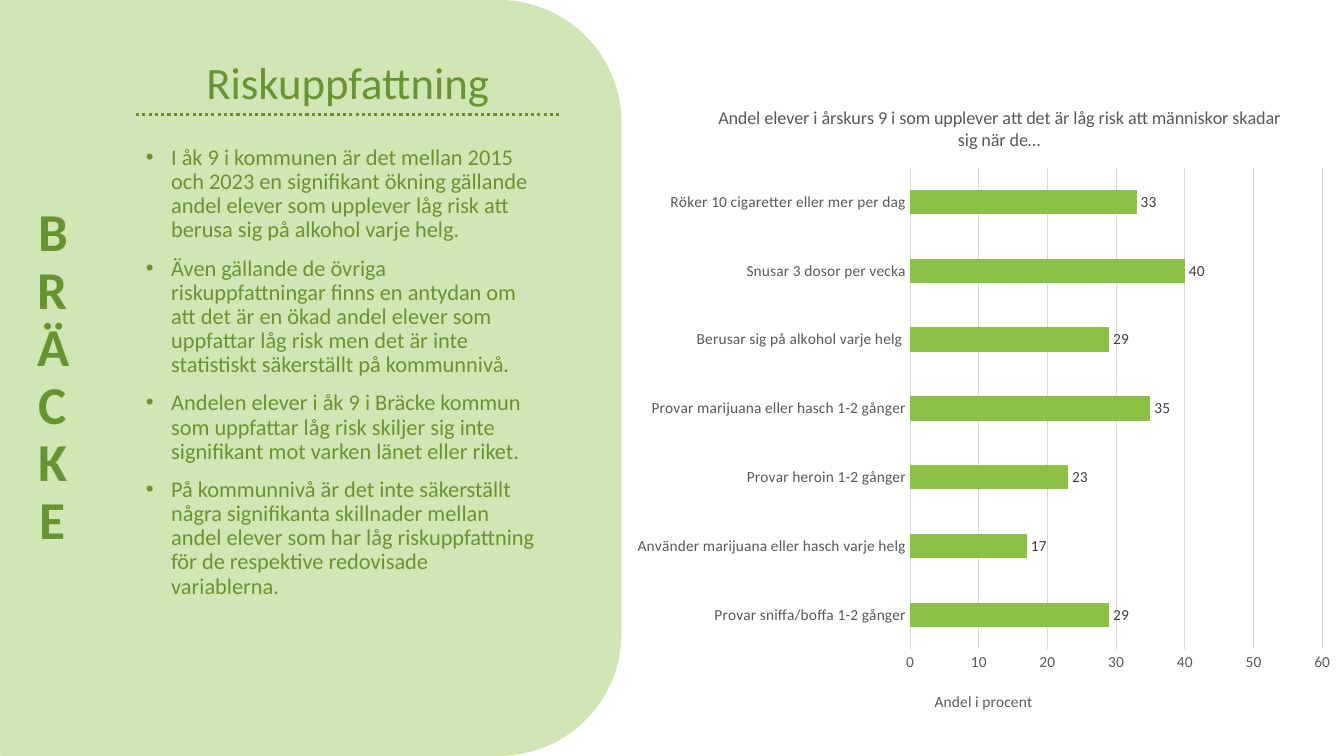
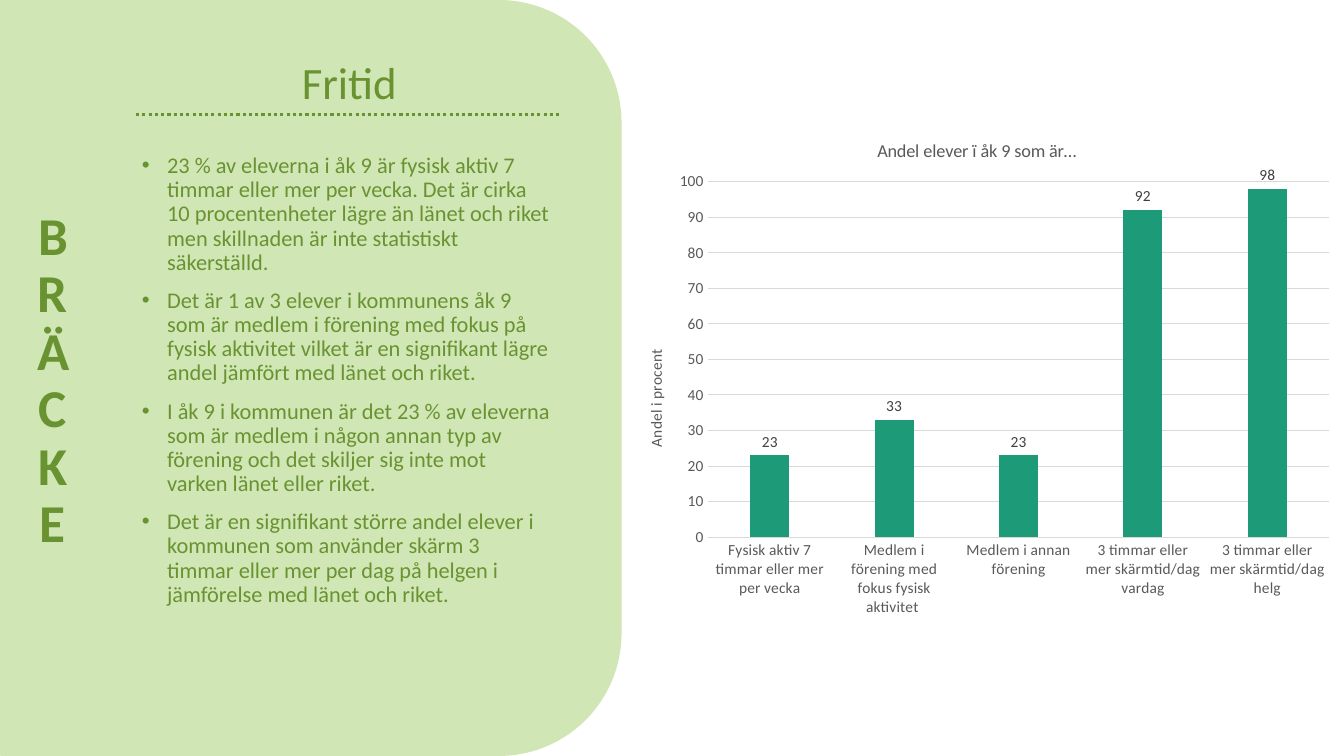
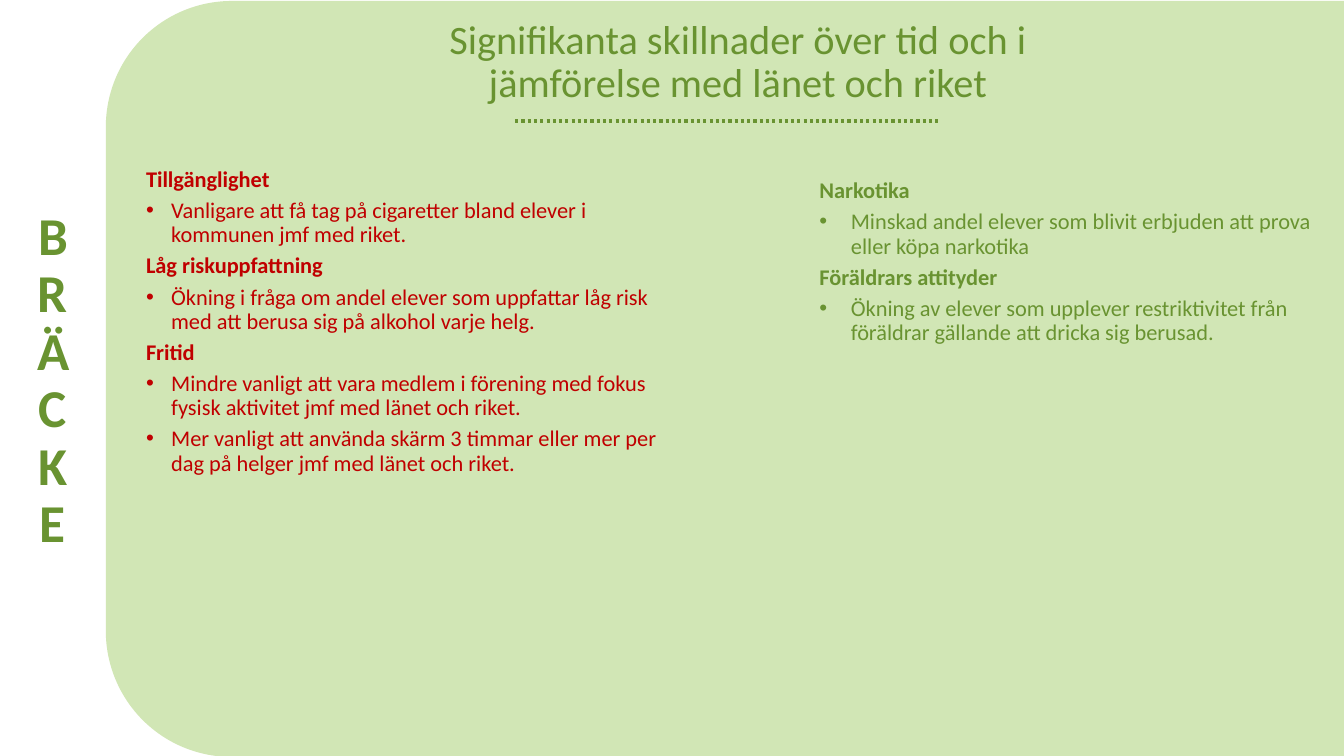
from dataclasses import dataclass

from pptx import Presentation
from pptx.chart.data import CategoryChartData
from pptx.dml.color import RGBColor
from pptx.enum.chart import XL_CHART_TYPE, XL_LABEL_POSITION, XL_TICK_MARK
from pptx.enum.dml import MSO_LINE
from pptx.enum.shapes import MSO_CONNECTOR, MSO_SHAPE
from pptx.enum.text import MSO_ANCHOR, MSO_AUTO_SIZE, PP_ALIGN
from pptx.oxml.ns import qn
from pptx.util import Pt
from lxml.etree import SubElement


@dataclass(frozen=True)
class Theme:
    font: str = "Calibri"
    panel: str = "D1E6B5"
    green: str = "699331"
    red: str = "C00000"
    lime: str = "8BC145"
    teal: str = "1D9A78"
    grid: str = "D9D9D9"
    axis: str = "595959"
    label: str = "404040"
    title_size: float = 32
    long_title_size: float = 28.8
    side_size: float = 38
    body_size: float = 16
    chart_title_size: float = 13
    chart_size: float = 11
    line_spacing: float = 0.9


class Report:
    def __init__(self, theme):
        self.theme = theme
        self.deck = Presentation()
        self.deck.slide_width, self.deck.slide_height = Pt(960), Pt(540)
        self.page = None

    def set_font(self, font, size, color, bold=False):
        font.name, font.size, font.bold = self.theme.font, Pt(size), bold
        font.color.rgb = RGBColor.from_string(color)

    def set_line(self, line, color, width):
        line.color.rgb = RGBColor.from_string(color)
        line.width = Pt(width)

    def new_page(self):
        self.page = self.deck.slides.add_slide(self.deck.slide_layouts[5])

    def panel(self, left, top, width):
        box = self.page.shapes.add_shape(
            MSO_SHAPE.ROUNDED_RECTANGLE, Pt(left), Pt(top), Pt(width), Pt(540))
        box.shadow.inherit = False
        box.fill.solid()
        box.fill.fore_color.rgb = RGBColor.from_string(self.theme.panel)
        box.line.fill.background()
        # Send behind the title placeholder
        box.element.getparent().insert(2, box.element)

    def centred(self, frame, text, size, anchor, bold=False):
        frame.word_wrap = True
        frame.auto_size = MSO_AUTO_SIZE.NONE
        frame.vertical_anchor = anchor
        para = frame.paragraphs[0]
        para.text = text
        para.alignment = PP_ALIGN.CENTER
        para.line_spacing = self.theme.line_spacing
        self.set_font(para.font, size, self.theme.green, bold)

    def title(self, text, left, top, width, height, size, anchor=MSO_ANCHOR.MIDDLE):
        box = self.page.shapes.title
        box.left, box.top = Pt(left), Pt(top)
        box.width, box.height = Pt(width), Pt(height)
        self.centred(box.text_frame, text, size, anchor)

    def side_name(self, text, top=10, height=525.6):
        box = self.page.shapes.add_textbox(Pt(0), Pt(top), Pt(75.6), Pt(height))
        self.centred(box.text_frame, text, self.theme.side_size, MSO_ANCHOR.BOTTOM, True)
        box.element.find(".//" + qn("a:bodyPr")).set("vert", "wordArtVert")

    def dotted_rule(self, left, top):
        rule = self.page.shapes.add_connector(
            MSO_CONNECTOR.STRAIGHT, Pt(left), Pt(top), Pt(left + 303), Pt(top))
        self.set_line(rule.line, self.theme.green, 2.25)
        rule.line.dash_style = MSO_LINE.ROUND_DOT
        SubElement(rule.element.spPr, qn("a:effectLst"))

    def body(self, items, left, top, width, height, color, gap=10, indent=18):
        """Items are bullets; those starting with # are bold headings."""
        box = self.page.shapes.add_textbox(Pt(left), Pt(top), Pt(width), Pt(height))
        frame = box.text_frame
        frame.word_wrap = True
        for index, item in enumerate(items):
            para = frame.add_paragraph() if index else frame.paragraphs[0]
            heading = item.startswith("#")
            para.text = item.lstrip("#")
            para.line_spacing = self.theme.line_spacing
            para.space_before = Pt(gap)
            if not heading:
                self.bullet(para, indent)
            self.set_font(para.font, self.theme.body_size, color, heading)

    def bullet(self, para, indent):
        properties = para._p.get_or_add_pPr()
        properties.set("marL", str(Pt(indent)))
        properties.set("indent", str(-Pt(indent)))
        SubElement(properties, qn("a:buFont")).set("typeface", "Arial")
        SubElement(properties, qn("a:buChar")).set("char", "•")

    def place(self, element, **fractions):
        """Give a chart part a fixed place, in fractions of the chart."""
        layout = element.find(qn("c:layout"))
        if layout is None:
            layout = element.makeelement(qn("c:layout"), {})
            element.insert(0 if element.find(qn("c:tx")) is None else 1, layout)
        manual = SubElement(layout, qn("c:manualLayout"))
        if "w" in fractions:
            SubElement(manual, qn("c:layoutTarget")).set("val", "inner")
        for side in "xy":
            SubElement(manual, qn(f"c:{side}Mode")).set("val", "edge")
        for key, value in fractions.items():
            SubElement(manual, qn(f"c:{key}")).set("val", str(value))

    def chart_heading(self, heading, text, size, x, y):
        para = heading.text_frame.paragraphs[0]
        para.text = text
        self.set_font(para.font, size, self.theme.axis)
        self.place(heading._element, x=x, y=y)

    def chart(self, kind, title, points, color, top, height, maximum, gap, overlap,
              plot_place, title_place, axis_place):
        theme = self.theme
        data = CategoryChartData(number_format="0")
        data.categories = [name for name, _ in points]
        data.add_series("Series 1", [value for _, value in points])
        chart = self.page.shapes.add_chart(
            kind, Pt(443.5), Pt(top), Pt(516.5), Pt(height), data).chart
        chart.has_legend = False
        self.set_font(chart.font, theme.chart_size, theme.axis)
        chart.has_title = True
        self.chart_heading(chart.chart_title, title, theme.chart_title_size, *title_place)
        x, y, width, depth = plot_place
        self.place(chart._chartSpace.find(".//" + qn("c:plotArea")),
                   x=x, y=y, w=width, h=depth)

        # Bars and their labels
        plot = chart.plots[0]
        plot.gap_width, plot.overlap, plot.vary_by_categories = gap, overlap, False
        fill = plot.series[0].format.fill
        fill.solid()
        fill.fore_color.rgb = RGBColor.from_string(color)
        plot.has_data_labels = True
        labels = plot.data_labels
        labels.show_value = True
        labels.position = XL_LABEL_POSITION.OUTSIDE_END
        labels.number_format, labels.number_format_is_linked = "0", False
        self.set_font(labels.font, theme.chart_size, theme.label)

        # Axes
        names, values = chart.category_axis, chart.value_axis
        for axis in (names, values):
            axis.major_tick_mark = axis.minor_tick_mark = XL_TICK_MARK.NONE
            self.set_font(axis.tick_labels.font, theme.chart_size, theme.axis)
        names.has_major_gridlines = False
        self.set_line(names.format.line, theme.grid, 0.75)
        values.minimum_scale, values.maximum_scale, values.major_unit = 0, maximum, 10
        values.has_major_gridlines = True
        self.set_line(values.major_gridlines.format.line, theme.grid, 0.75)
        values.format.line.fill.background()
        values.has_title = True
        self.chart_heading(values.axis_title, "Andel i procent", theme.chart_size, *axis_place)
        if kind == XL_CHART_TYPE.COLUMN_CLUSTERED:
            turned = values.axis_title._element.find(".//" + qn("a:bodyPr"))
            turned.set("rot", "-5400000")
            turned.set("vert", "horz")


def main():
    theme = Theme()
    report = Report(theme)

    # Risk perception
    report.new_page()
    report.panel(-82, 0, 526)
    report.title("Riskuppfattning", 61, 18.7, 375, 62.6, theme.title_size, MSO_ANCHOR.BOTTOM)
    report.body([
        "I åk 9 i kommunen är det mellan 2015 och 2023 en signifikant ökning gällande andel elever som upplever låg risk att berusa sig på alkohol varje helg.",
        "Även gällande de övriga riskuppfattningar finns en antydan om att det är en ökad andel elever som uppfattar låg risk men det är inte statistiskt säkerställt på kommunnivå.",
        "Andelen elever i åk 9 i Bräcke kommun som uppfattar låg risk skiljer sig inte signifikant mot varken länet eller riket.",
        "På kommunnivå är det inte säkerställt några signifikanta skillnader mellan andel elever som har låg riskuppfattning för de respektive redovisade variablerna.",
    ], 97.2, 100.8, 296, 391.7, theme.green)
    report.chart(
        XL_CHART_TYPE.BAR_CLUSTERED,
        "Andel elever i årskurs 9 i som upplever att det är låg risk att människor skadar sig när de…",
        [("Provar sniffa/boffa 1-2 gånger", 29),
         ("Använder marijuana eller hasch varje helg", 17),
         ("Provar heroin 1-2 gånger", 23),
         ("Provar marijuana eller hasch 1-2 gånger", 35),
         ("Berusar sig på alkohol varje helg ", 29),
         ("Snusar 3 dosor per vecka", 40),
         ("Röker 10 cigaretter eller mer per dag", 33)],
        theme.lime, top=54.7, height=465, maximum=60, gap=182, overlap=0,
        plot_place=(0.4, 0.14, 0.57, 0.74), title_place=(0.13, 0.04), axis_place=(0.43, 0.94))
    report.side_name("BRÄCKE", 8.6, 523.4)
    report.dotted_rule(97.2, 82)

    # Leisure
    report.new_page()
    report.panel(-82, 0, 526)
    report.title("Fritid", 82.8, 28.8, 333.4, 64, theme.title_size)
    report.side_name("BRÄCKE")
    report.body([
        "23 % av eleverna i åk 9 är fysisk aktiv 7 timmar eller mer per vecka. Det är cirka 10 procentenheter lägre än länet och riket men skillnaden är inte statistiskt säkerställd.",
        "Det är 1 av 3 elever i kommunens åk 9 som är medlem i förening med fokus på fysisk aktivitet vilket är en signifikant lägre andel jämfört med länet och riket.",
        "I åk 9 i kommunen är det 23 % av eleverna som är medlem i någon annan typ av förening och det skiljer sig inte mot varken länet eller riket.",
        "Det är en signifikant större andel elever i kommunen som använder skärm 3 timmar eller mer per dag på helgen i jämförelse med länet och riket.",
    ], 94.3, 106.6, 306, 402.5, theme.green)
    report.chart(
        XL_CHART_TYPE.COLUMN_CLUSTERED, "Andel elever ï åk 9 som är…",
        [("Fysisk aktiv 7 timmar eller mer per vecka", 23),
         ("Medlem i förening med fokus fysisk aktivitet ", 33),
         ("Medlem i annan förening", 23),
         ("3 timmar eller mer skärmtid/dag vardag", 92),
         ("3 timmar eller mer skärmtid/dag helg", 98)],
        theme.teal, top=82, height=368, maximum=100, gap=219, overlap=-27,
        plot_place=(0.12, 0.13, 0.86, 0.69), title_place=(0.35, 0.04), axis_place=(0.03, 0.45))
    report.dotted_rule(97.2, 82)

    # Significant differences
    report.new_page()
    report.panel(75.6, 0.7, 976.3)
    report.side_name("BRÄCKE")
    report.body([
        "#Tillgänglighet",
        "Vanligare att få tag på cigaretter bland elever i kommunen jmf med riket.",
        "#Låg riskuppfattning",
        "Ökning i fråga om andel elever som uppfattar låg risk med att berusa sig på alkohol varje helg.",
        "#Fritid",
        "Mindre vanligt att vara medlem i förening med fokus fysisk aktivitet jmf med länet och riket.",
        "Mer vanligt att använda skärm 3 timmar eller mer per dag på helger jmf med länet och riket.",
    ], 97.2, 116.6, 390.2, 339, theme.red, gap=5)
    report.body([
        "#Narkotika",
        "Minskad andel elever som blivit erbjuden att prova eller köpa narkotika",
        "#Föräldrars attityder",
        "Ökning av elever som upplever restriktivitet från föräldrar gällande att dricka sig berusad.",
    ], 578.2, 124.6, 390.2, 149, theme.green, gap=5, indent=22.5)
    report.dotted_rule(368, 86.4)
    report.title("Signifikanta skillnader över tid och i jämförelse med länet och riket",
                 311.8, 13, 430.6, 64, theme.long_title_size)

    report.deck.save("out.pptx")


if __name__ == "__main__":
    main()
